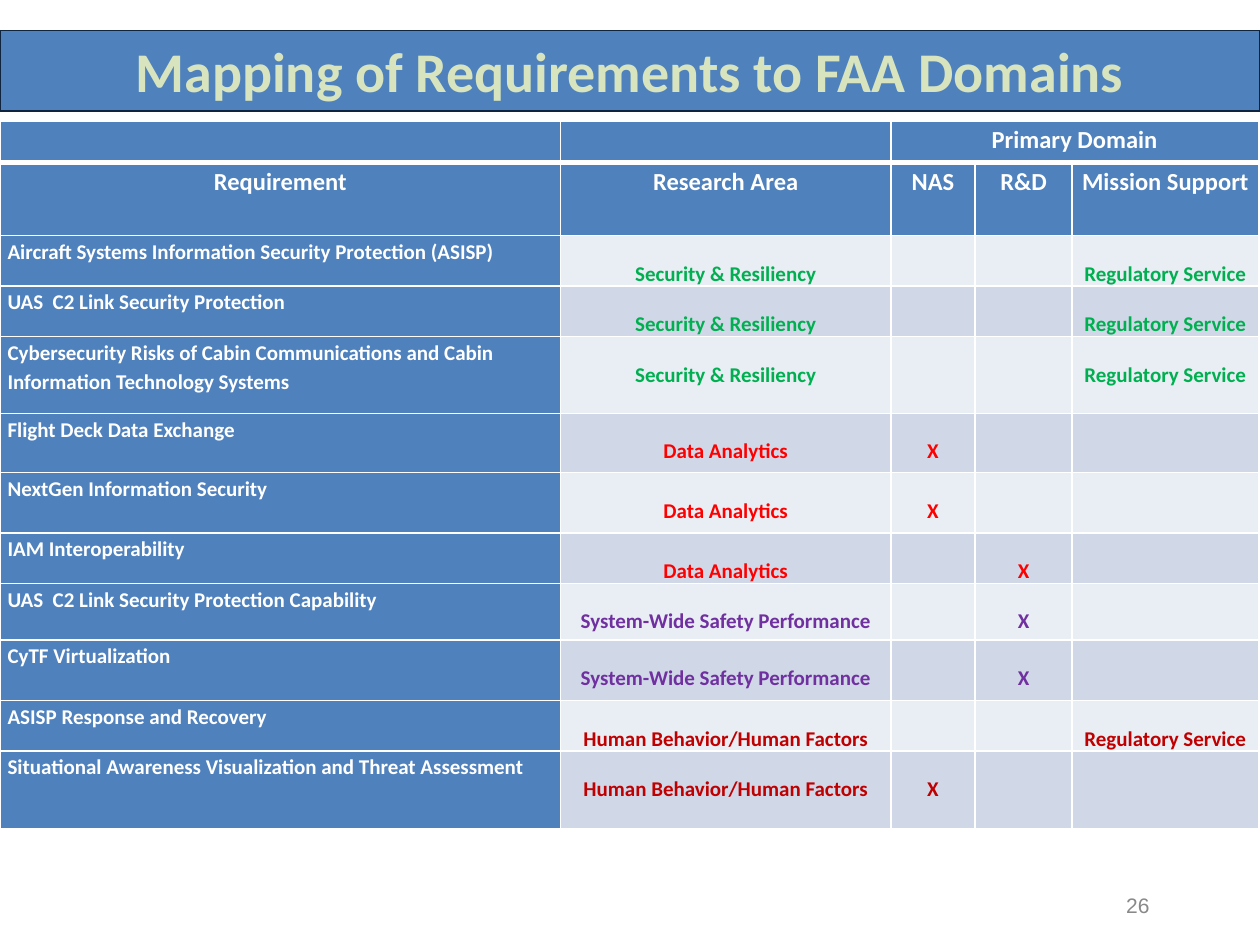
from pptx import Presentation
from pptx.dml.color import RGBColor
from pptx.enum.text import MSO_ANCHOR, PP_ALIGN
from pptx.oxml.ns import qn
from pptx.util import Inches, Pt
from lxml import etree

LEFT, CENTER = PP_ALIGN.LEFT, PP_ALIGN.CENTER
TOP, MIDDLE = MSO_ANCHOR.TOP, MSO_ANCHOR.MIDDLE

COLORS = {
    "blue": "4F81BD", "navy": "0F243E", "lime": "D7E4BD", "white": "FFFFFF",
    "gray": "898989", "light": "E9EDF4", "dark": "D0D8E8",
    "green": "00B050", "red": "FF0000", "purple": "7030A0", "crimson": "C00000",
}

SECURITY, ANALYTICS = "Security & Resiliency", "Data Analytics"
SAFETY, HUMAN = "System-Wide Safety Performance", "Human Behavior/Human Factors"
AREA_COLORS = {SECURITY: "green", ANALYTICS: "red", SAFETY: "purple", HUMAN: "crimson"}

NAS, RD, MISSION = 2, 3, 4
MARKS = {NAS: "X", RD: "X", MISSION: "Regulatory Service"}
HEADERS = ["Requirement", "Research Area", "NAS", "R&D", "Mission Support"]
# Requirement, research area, column of the primary domain
REQUIREMENTS = [
    ("Aircraft Systems Information Security Protection (ASISP)", SECURITY, MISSION),
    ("UAS  C2 Link Security Protection", SECURITY, MISSION),
    ("Cybersecurity Risks of Cabin Communications and Cabin "
     "Information Technology Systems", SECURITY, MISSION),
    ("Flight Deck Data Exchange", ANALYTICS, NAS),
    ("NextGen Information Security", ANALYTICS, NAS),
    ("IAM Interoperability", ANALYTICS, RD),
    ("UAS  C2 Link Security Protection Capability", SAFETY, RD),
    ("CyTF Virtualization", SAFETY, RD),
    ("ASISP Response and Recovery", HUMAN, MISSION),
    ("Situational Awareness Visualization and Threat Assessment", HUMAN, NAS),
]
COL_WIDTHS = [4.45, 2.62, 0.67, 0.77, 1.48]
ROW_HEIGHTS = [0.33, 0.58, 0.39, 0.39, 0.61, 0.47, 0.48, 0.39, 0.45, 0.48, 0.4, 0.62]


def rgb(name):
    return RGBColor.from_string(COLORS[name])


class SlideBuilder:
    """Holds the text style and the current slide."""

    def __init__(self, prs, font="Calibri"):
        self.font = font
        self.s = prs.slides.add_slide(prs.slide_layouts[5])

    def add_text(self, tf, text, color, align=CENTER, spacing=1.0, **fmt):
        p = tf.paragraphs[0]
        p.alignment, p.line_spacing = align, spacing
        r = p.add_run()
        r.text = text
        for key, value in {"name": self.font, "bold": True, **fmt}.items():
            setattr(r.font, key, value)
        r.font.color.rgb = rgb(color)

    def title(self, text, *box):
        sp = self.s.shapes.title
        sp.left, sp.top, sp.width, sp.height = map(Inches, box)
        sp.fill.solid()
        sp.fill.fore_color.rgb = rgb("blue")
        sp.line.color.rgb = rgb("navy")
        sp.line.width = Pt(0.75)
        sp.text_frame.vertical_anchor = MIDDLE
        self.add_text(sp.text_frame, text, "lime", size=Pt(32))

    def text(self, text, color, *box, **fmt):
        tf = self.s.shapes.add_textbox(*map(Inches, box)).text_frame
        tf.word_wrap = True
        tf.vertical_anchor = MIDDLE
        self.add_text(tf, text, color, **fmt)

    def table(self, x, y, widths, heights):
        size = map(Inches, (x, y, sum(widths), sum(heights)))
        tbl = self.s.shapes.add_table(len(heights), len(widths), *size).table
        tbl.first_row = tbl.horz_banding = False
        for col, w in zip(tbl.columns, widths):
            col.width = Inches(w)
        for row, h in zip(tbl.rows, heights):
            row.height = Inches(h)
        return tbl

    def cell(self, cell, fill, text="", color="white", borders=None, **fmt):
        margins = {"margin_left": 0.06, "margin_right": 0.06,
                   "margin_top": 0, "margin_bottom": 0}
        for key, value in margins.items():
            setattr(cell, key, Inches(value))
        cell.vertical_anchor = TOP
        self.borders(cell, borders or {})
        cell.fill.solid()
        cell.fill.fore_color.rgb = rgb(fill)
        if text:
            self.add_text(cell.text_frame, text, color, **fmt)

    def borders(self, cell, widths):
        tc_pr = cell._tc.get_or_add_tcPr()
        for side in ("lnL", "lnR", "lnT", "lnB"):
            ln = etree.SubElement(tc_pr, qn(f"a:{side}"), w=str(Pt(widths.get(side, 1))))
            solid = etree.SubElement(ln, qn("a:solidFill"))
            etree.SubElement(solid, qn("a:srgbClr"), val=COLORS["white"])


def main():
    prs = Presentation()
    prs.slide_width, prs.slide_height = Inches(10), Inches(7.5)
    b = SlideBuilder(prs)

    # Title band and page number
    b.title("Mapping of Requirements to FAA Domains", 0, 0.24, 10, 0.64)
    b.text("26", "gray", 8.22, 6.98, 1.62, 0.4, name="Arial", size=Pt(12), bold=False)

    # Header rows
    tbl = b.table(0, 0.96, COL_WIDTHS, ROW_HEIGHTS)
    tbl.cell(0, NAS).merge(tbl.cell(0, MISSION))
    header = {"spacing": 1.15, "size": Pt(14)}
    for c, name in enumerate(HEADERS):
        group = "Primary Domain" if c == NAS else ""
        b.cell(tbl.cell(0, c), "blue", group, borders={"lnB": 3}, **header)
        b.cell(tbl.cell(1, c), "blue", name, borders={"lnT": 3}, **header)

    # One row per requirement, marked under its primary domain
    for i, (requirement, area, domain) in enumerate(REQUIREMENTS):
        row, band = i + 2, ("light", "dark")[i % 2]
        b.cell(tbl.cell(row, 0), "blue", requirement, align=LEFT, spacing=1.15, size=Pt(12))
        texts = {1: area, domain: MARKS[domain]}
        for c in range(1, len(HEADERS)):
            b.cell(tbl.cell(row, c), band, texts.get(c, ""), AREA_COLORS[area],
                   spacing=2.0, size=Pt(12))

    prs.save("out.pptx")


if __name__ == "__main__":
    main()
